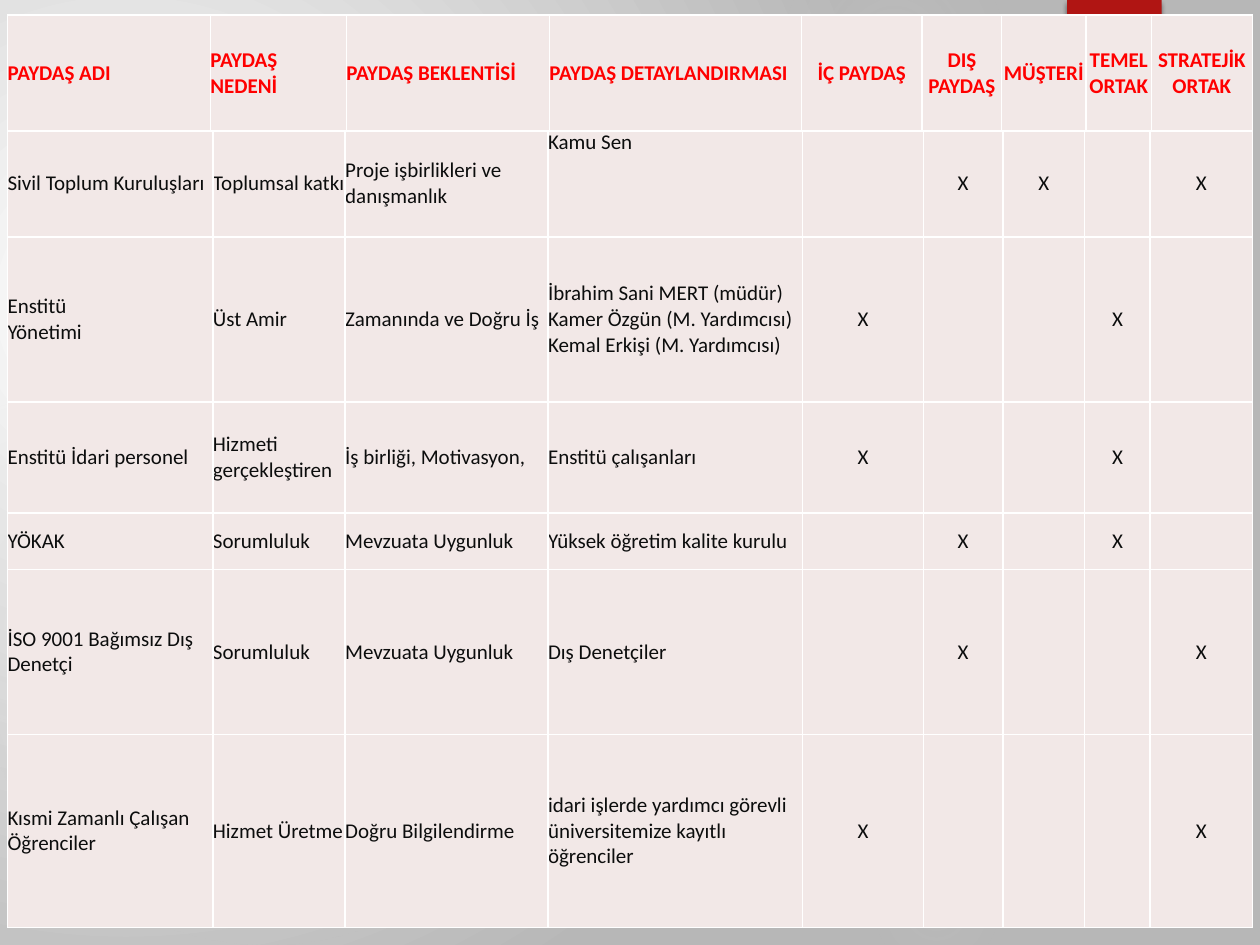
from lxml import etree
from pptx import Presentation
from pptx.dml.color import RGBColor
from pptx.enum.shapes import MSO_SHAPE
from pptx.enum.text import MSO_ANCHOR, PP_ALIGN
from pptx.oxml import parse_xml
from pptx.oxml.ns import nsdecls, qn
from pptx.util import Inches, Pt

OVAL, RECTANGLE = MSO_SHAPE.OVAL, MSO_SHAPE.RECTANGLE
LEFT, CENTER = PP_ALIGN.LEFT, PP_ALIGN.CENTER
TOP, MIDDLE = MSO_ANCHOR.TOP, MSO_ANCHOR.MIDDLE

COLORS = {
    "white": "FFFFFF", "backdrop": "B7B7B7", "glow": "D9D9D9", "tab": "B01513",
    "shadow": "000000", "cell": "F2E8E7", "heading": "FF0000", "body": "0C0D0D",
}


def set_gradient(fill, owner, stops, focus):
    """Circular gradient; stops are (position %, colour, opacity %)."""
    fill.gradient()
    old = next(owner.iter(qn("a:gradFill")))
    stop_xml = "".join(
        f'<a:gs pos="{position * 1000}"><a:srgbClr val="{COLORS[color]}">'
        f'<a:alpha val="{opacity * 1000}"/></a:srgbClr></a:gs>'
        for position, color, opacity in stops)
    left, top, right, bottom = (value * 1000 for value in focus)
    old.getparent().replace(old, parse_xml(
        f'<a:gradFill {nsdecls("a")} rotWithShape="1"><a:gsLst>{stop_xml}</a:gsLst>'
        f'<a:path path="circle"><a:fillToRect l="{left}" t="{top}" r="{right}" b="{bottom}"/>'
        f'</a:path></a:gradFill>'))


def add_grid(slide, top, widths, heights, rows, color, bold):
    """Table with white borders; the first four columns are left-aligned."""
    frame = slide.shapes.add_table(
        len(rows), len(widths), Inches(0.06), Inches(top),
        Inches(sum(widths)), Inches(sum(heights)))
    table = frame.table
    table.first_row = table.horz_banding = False
    for column, width in zip(table.columns, widths):
        column.width = Inches(width)
    for row, height, texts in zip(table.rows, heights, rows):
        row.height = Inches(height)
        for index, (cell, text) in enumerate(zip(row.cells, texts)):
            cell.margin_left = cell.margin_right = 0
            cell.margin_top = cell.margin_bottom = 0
            cell.vertical_anchor = TOP if text == "Kamu Sen" else MIDDLE
            cell.text = text
            paragraph = cell.text_frame.paragraphs[0]
            paragraph.alignment = LEFT if index < 4 else CENTER
            paragraph.font.name = "Calibri"
            paragraph.font.size = Pt(12)
            paragraph.font.bold = bold
            paragraph.font.color.rgb = RGBColor.from_string(COLORS[color])
            cell.fill.solid()
            cell.fill.fore_color.rgb = RGBColor.from_string(COLORS["cell"])
            properties = cell._tc.get_or_add_tcPr()
            for position, side in enumerate(("lnL", "lnR", "lnT", "lnB")):
                properties.insert(position, parse_xml(
                    f'<a:{side} {nsdecls("a")} w="12700"><a:solidFill>'
                    f'<a:srgbClr val="{COLORS["white"]}"/></a:solidFill></a:{side}>'))


presentation = Presentation()
presentation.slide_width = Inches(10)
presentation.slide_height = Inches(7.5)
slide = presentation.slides.add_slide(presentation.slide_layouts[6])

# Background
set_gradient(slide.background.fill, slide.element,
             [(0, "white", 100), (100, "backdrop", 100)], (45, 65, 125, 100))

# Soft glows: left, top, diameter, (position %, opacity %) stops
glows = [
    (6.22, -0.5, 1.75, [(0, 14), (36, 7), (73, 0)]),
    (6.89, 6.67, 1.08, [(0, 9), (36, 5), (66, 0)]),
    (-0.17, 2.92, 4.58, [(0, 11), (36, 10), (75, 0)]),
    (-0.92, 3.17, 2.58, [(0, 8), (36, 8), (72, 0)]),
]
for left, top, diameter, stops in glows:
    glow = slide.shapes.add_shape(OVAL, Inches(left), Inches(top),
                                  Inches(diameter), Inches(diameter))
    glow.shadow.inherit = False
    glow.line.fill.background()
    set_gradient(glow.fill, glow.element,
                 [(position, "glow", opacity) for position, opacity in stops],
                 (50, 50, 50, 50))

# Red tab with a soft shadow
tab = slide.shapes.add_shape(RECTANGLE, Inches(8.47), 0, Inches(0.75), Inches(1.2))
tab.shadow.inherit = False
tab.fill.solid()
tab.fill.fore_color.rgb = RGBColor.from_string(COLORS["tab"])
tab.line.fill.background()
shadow = etree.SubElement(tab.element.spPr.find(qn("a:effectLst")), qn("a:outerShdw"),
                          blurRad=str(Pt(3)), dist=str(Pt(2)), dir="5400000")
shadow_color = etree.SubElement(shadow, qn("a:srgbClr"), val=COLORS["shadow"])
etree.SubElement(shadow_color, qn("a:alpha"), val="45000")

# Stakeholder table
stakeholders = [
    ["Sivil Toplum Kuruluşları", "Toplumsal katkı", "Proje işbirlikleri ve danışmanlık",
     "Kamu Sen", "", "X", "X", "", "X"],
    ["Enstitü \vYönetimi", "Üst Amir", "Zamanında ve Doğru İş",
     "İbrahim Sani MERT (müdür)\vKamer Özgün (M. Yardımcısı)\vKemal Erkişi (M. Yardımcısı)",
     "X", "", "", "X", ""],
    ["Enstitü İdari personel", "Hizmeti gerçekleştiren", "İş birliği, Motivasyon,",
     "Enstitü çalışanları", "X", "", "", "X", ""],
    ["YÖKAK", "Sorumluluk", "Mevzuata Uygunluk",
     "Yüksek öğretim kalite kurulu", "", "X", "", "X", ""],
    ["İSO 9001 Bağımsız Dış Denetçi", "Sorumluluk", "Mevzuata Uygunluk",
     "Dış Denetçiler", "", "X", "", "", "X"],
    ["Kısmi Zamanlı Çalışan Öğrenciler", "Hizmet Üretme", "Doğru Bilgilendirme",
     "idari işlerde yardımcı görevli üniversitemize kayıtlı öğrenciler",
     "X", "", "", "", "X"],
]
add_grid(slide, 1.03, [1.63, 1.05, 1.61, 2.02, 0.96, 0.63, 0.65, 0.52, 0.81],
         [0.85, 1.31, 0.88, 0.45, 1.31, 1.53], stakeholders, "body", False)

# Heading table
headings = ["PAYDAŞ ADI", "PAYDAŞ NEDENİ", "PAYDAŞ BEKLENTİSİ", "PAYDAŞ DETAYLANDIRMASI",
            "İÇ PAYDAŞ", "DIŞ PAYDAŞ", "MÜŞTERİ", "TEMEL ORTAK", "STRATEJİK ORTAK"]
add_grid(slide, 0.12, [1.61, 1.08, 1.61, 2, 0.96, 0.63, 0.67, 0.52, 0.8],
         [0.92], [headings], "heading", True)

presentation.save("out.pptx")
